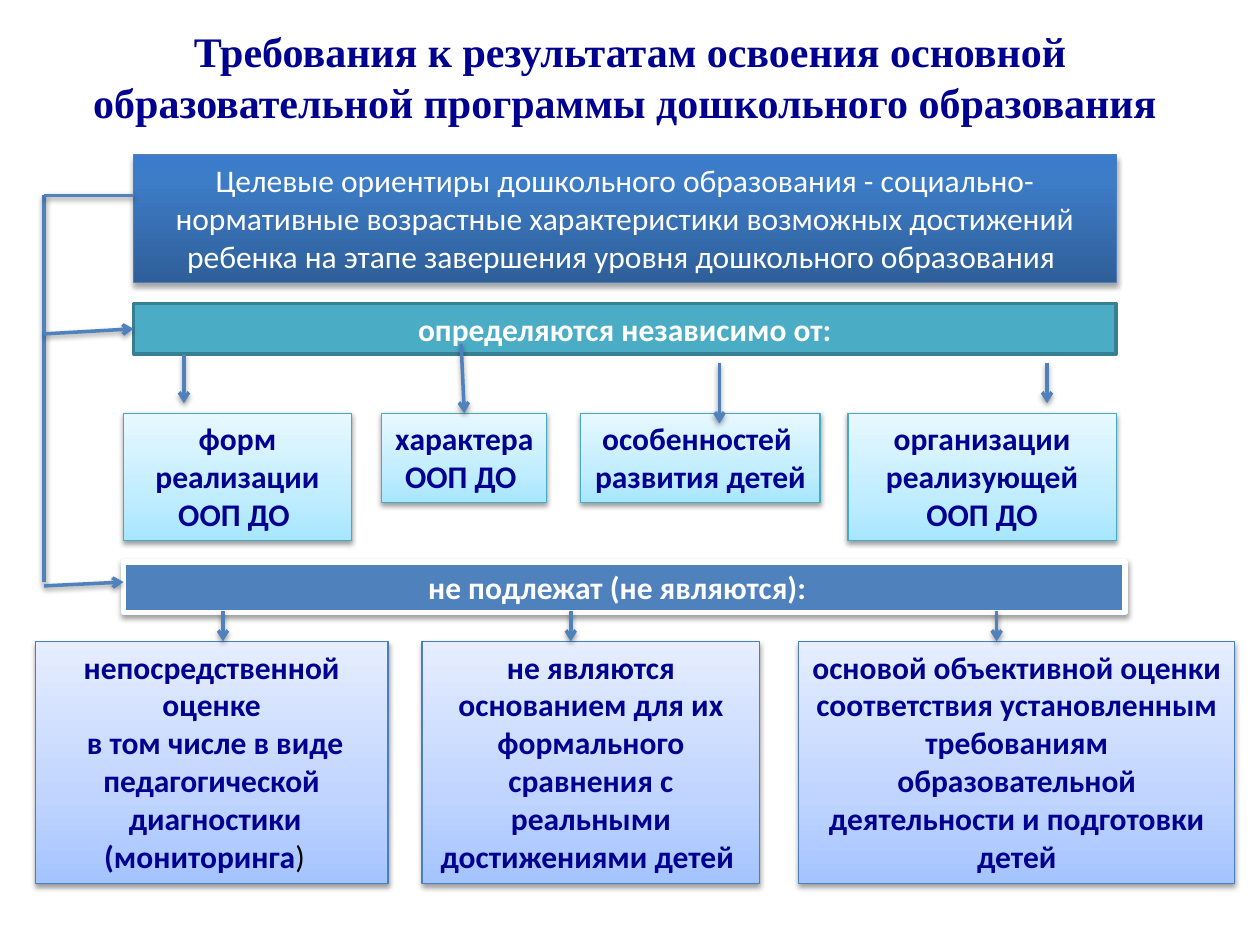
from dataclasses import dataclass
from typing import Optional

from lxml.etree import SubElement as Sub
from pptx import Presentation
from pptx.dml.color import RGBColor
from pptx.enum.shapes import MSO_CONNECTOR as Conn, MSO_SHAPE as Geom
from pptx.enum.text import MSO_ANCHOR as Anchor, MSO_AUTO_SIZE as Fit, PP_ALIGN as Align
from pptx.oxml.ns import qn
from pptx.util import Inches, Pt

NAVY, WHITE, BLUE = "000090", "FFFFFF", "4F81BD"
SOFT = (38, 1.6)


@dataclass(frozen=True)
class Style:
    fill: tuple
    line: str
    width: float = 0.75
    ink: str = NAVY
    bold: bool = True
    shade: Optional[tuple] = SOFT


@dataclass(frozen=True)
class Box:
    left: float
    top: float
    width: float
    height: float
    style: Style
    paras: tuple
    wrap: bool = True
    tail: str = ""


@dataclass(frozen=True)
class Link:
    start: tuple
    end: tuple
    arrow: bool = True
    goal: Optional[tuple] = None


def tint(code: str) -> RGBColor:
    return RGBColor.from_string(code)


def put(item, form: dict) -> None:
    for name, value in form.items():
        setattr(item, name, value)


def write(para, text: str, ink: str, bold: bool, size: int = 18, face: str = "Calibri") -> None:
    para.alignment = Align.CENTER
    run = para.add_run()
    run.text = text
    put(run.font, {"name": face, "size": Pt(size), "bold": bold})
    run.font.color.rgb = tint(ink)


def add_tone(node, code: str):
    return Sub(node, qn("a:srgbClr"), val=code)


def cast(props, shade: Optional[tuple]) -> None:
    effects = props.find(qn("a:effectLst"))
    if effects is None:
        effects = Sub(props, qn("a:effectLst"))
    if shade:
        alpha, dist = shade
        outer = Sub(effects, qn("a:outerShdw"), blurRad=str(Pt(3.1)), dist=str(Pt(dist)),
                    dir="5400000", rotWithShape="0")
        Sub(add_tone(outer, "000000"), qn("a:alpha"), val=str(alpha * 1000))


def paint(shape, stops: tuple) -> None:
    if len(stops) == 1:
        shape.fill.solid()
        shape.fill.fore_color.rgb = tint(stops[0])
        return
    shape.fill.gradient()
    shape.fill.gradient_angle = 90
    ramp = shape._element.spPr.find(qn("a:gradFill")).find(qn("a:gsLst"))
    for old in list(ramp):
        ramp.remove(old)
    for place, code in stops:
        add_tone(Sub(ramp, qn("a:gs"), pos=str(place * 1000)), code)


def draw_box(slide, box: Box):
    style = box.style
    area = map(Inches, (box.left, box.top, box.width, box.height))
    shape = slide.shapes.add_shape(Geom.RECTANGLE, *area)
    paint(shape, style.fill)
    shape.line.color.rgb = tint(style.line)
    shape.line.width = Pt(style.width)
    shape.shadow.inherit = False
    cast(shape._element.spPr, style.shade)
    frame = shape.text_frame
    put(frame, {"word_wrap": box.wrap, "auto_size": Fit.SHAPE_TO_FIT_TEXT,
                "vertical_anchor": Anchor.TOP})
    for spot, text in enumerate(box.paras):
        para = frame.add_paragraph() if spot else frame.paragraphs[0]
        write(para, text, style.ink, style.bold)
    if box.tail:
        write(para, box.tail, "000000", False)
    return shape


def draw_link(slide, link: Link) -> None:
    line = slide.shapes.add_connector(Conn.STRAIGHT, *map(Inches, link.start + link.end))
    line.line.color.rgb = tint(BLUE)
    line.line.width = Pt(2)
    if link.goal:
        line.end_connect(*link.goal)
    props = line._element.spPr
    if link.arrow:
        Sub(props.find(qn("a:ln")), qn("a:tailEnd"), type="arrow")
    cast(props, SOFT)


def main() -> None:
    deck = Presentation()
    put(deck, {"slide_width": Inches(10), "slide_height": Inches(7.5)})
    slide = deck.slides.add_slide(deck.slide_layouts[5])

    title = slide.shapes.title
    put(title, {"left": Inches(0.5), "top": Inches(0.3),
                "width": Inches(9), "height": Inches(0.61)})
    put(title.text_frame, {"word_wrap": True, "auto_size": Fit.NONE,
                           "vertical_anchor": Anchor.MIDDLE})
    write(title.text_frame.paragraphs[0],
          "Требования к результатам освоения основной образовательной программы "
          "дошкольного образования ", NAVY, True, 24, "Times New Roman")

    head = Style(((0, "2F5F99"), (80, "3D7CC7"), (100, "3A7CCB")), "4B7EBC",
                 ink=WHITE, bold=False, shade=(35, 1.8))
    teal = Style(("4BACC6",), "377F92", 2, WHITE, shade=None)
    band = Style((BLUE,), WHITE, 3, WHITE)
    aqua = Style(((0, "A7E6FF"), (35, "C1EDFF"), (100, "E7F8FF")), "46AAC5")
    sky = Style(((0, "A4C4FF"), (35, "BFD4FF"), (100, "E6EEFF")), "4B7EBC")

    draw_box(slide, Box(1.06, 1.23, 7.8, 1.01, head, (
        "Целевые ориентиры дошкольного образования - социально-нормативные возрастные "
        "характеристики возможных достижений ребенка на этапе завершения уровня "
        "дошкольного образования ",)))
    free = draw_box(slide, Box(1.06, 2.41, 7.8, 0.4, teal, ("определяются независимо от:",)))

    mid = 3.28
    draw_box(slide, Box(0.98, mid, 1.81, 1.01, aqua, ("форм реализации ООП ДО ",)))
    kind = draw_box(slide, Box(3.03, mid, 1.31, 0.71, aqua, ("характера ", "ООП ДО "), False))
    draw_box(slide, Box(4.61, mid, 1.9, 0.71, aqua,
                        ("особенностей ", "развития детей "), False))
    draw_box(slide, Box(6.73, mid, 2.13, 1.01, aqua, ("организации", "реализующей ООП ДО")))

    links = [Link((1.46, 2.81), (1.46, 3.2)),
             Link((3.66, 2.73), (3.69, mid), goal=(kind, 0)),
             Link((5.71, 2.88), (5.71, 3.36)),
             Link((8.31, 2.88), (8.31, 3.2))]
    for link in links:
        draw_link(slide, link)

    draw_box(slide, Box(0.98, 4.46, 7.95, 0.4, band, ("не подлежат (не являются):  ",)))

    low = 5.09
    draw_box(slide, Box(0.28, low, 2.8, 1.92, sky, (
        "непосредственной оценке", " в том числе в виде педагогической",
        " диагностики (мониторинга"), tail=")  "))
    draw_box(slide, Box(3.35, low, 2.68, 1.92, sky, (
        "не являются основанием для их формального сравнения с реальными "
        "достижениями детей ",)))
    draw_box(slide, Box(6.34, low, 3.46, 1.92, sky, (
        "основой объективной оценки соответствия установленным требованиям "
        "образовательной деятельности и подготовки детей",)))

    rail = 0.35
    links = [Link((rail, 1.55), (rail, 4.62), False),
             Link((1.06, 1.55), (rail, 1.55), False),
             Link((rail, 4.65), (0.98, 4.62)),
             Link((rail, 2.65), (1.06, 2.61), goal=(free, 1))]
    links += [Link((x, 4.85), (x, low)) for x in (7.91, 4.53, 1.77)]
    for link in links:
        draw_link(slide, link)

    deck.save("out.pptx")


if __name__ == "__main__":
    main()
